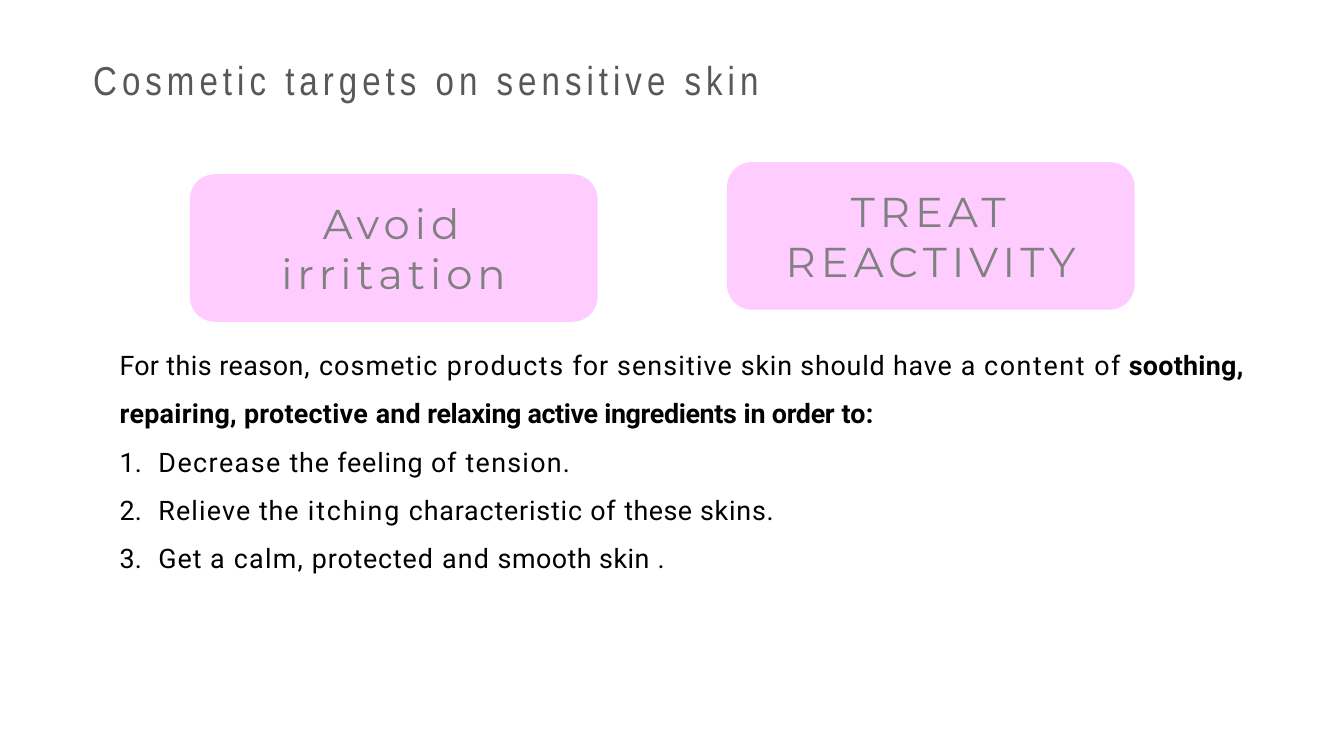
from pptx import Presentation
from pptx.dml.color import RGBColor
from pptx.enum.shapes import MSO_SHAPE
from pptx.enum.text import MSO_ANCHOR, MSO_AUTO_SIZE, PP_ALIGN
from pptx.util import Inches, Pt
from lxml import etree

ROUNDED = MSO_SHAPE.ROUNDED_RECTANGLE
MIDDLE, TOP = MSO_ANCHOR.MIDDLE, MSO_ANCHOR.TOP
LEFT, CENTER = PP_ALIGN.LEFT, PP_ALIGN.CENTER
NO_FIT = MSO_AUTO_SIZE.NONE
DRAWING = "{http://schemas.openxmlformats.org/drawingml/2006/main}"

TITLE = "Cosmetic targets on sensitive skin"
CARDS = [
    ("Avoid irritation", 1.57, 1.44),
    ("TREAT REACTIVITY", 6.01, 1.34),
]
# Each span is its text and its letter spacing in points.
REASON = [
    ("For", 0.1), (" this reason", 0.3), (",", 1), (" cosmetic", 0.7),
    (" products", 0.9), (" for", 0.6), (" sensitive", 0.7),
    (" skin should have", 0.5), (" a ", 0.6), ("content", 1), (" of", 0.8),
]
INGREDIENTS = [
    (" soothing, repairing, protective", 0.2), (" and", 0.1),
    (" relaxing active ingredients ", -0.2), ("in", 0), (" order", -0.2),
    (" to", 0.1), (":", 0.6),
]
GOALS = [
    [("Decrease", 0.9), (" the feeling of", 0.5), (" tension.", 0.8)],
    [("Relieve", 0.7), (" the", 0.5), (" itching", 1.1),
     (" characteristic of", 0.5), (" these ", 0.3), ("skins.", 0.5)],
    [("Get a", 0.6), (" calm,", 0.8), (" protected", 0.5), (" and", 0.8),
     (" smooth skin ", 0.3), (".", 0.5)],
]


def color(value):
    return RGBColor.from_string(value)


class SlideBuilder:
    title_style = ("Arial Narrow", 24, "585858")
    card_style = ("Montserrat", 24.8, "808080")
    body_style = ("Roboto", 16, "000000")
    card_fill = "FFCCFF"

    def __init__(self, page):
        self.page = page

    def frame(self, box, anchor, side=0):
        """Prepare the text frame of a box with equal side margins."""
        frame = box.text_frame
        frame.word_wrap = True
        frame.auto_size = NO_FIT
        frame.vertical_anchor = anchor
        frame.margin_left = frame.margin_right = Inches(side)
        frame.margin_top = frame.margin_bottom = 0
        return frame

    def spans(self, para, spans, style, bold=False):
        name, size, ink = style
        for text, spacing in spans:
            span = para.add_run()
            span.text = text
            font = span.font
            font.name, font.size, font.bold = name, Pt(size), bold
            font.color.rgb = color(ink)
            span._r.get_or_add_rPr().set("spc", str(round(spacing * 100)))

    def title(self, text, left, top, width, height):
        box = self.page.shapes.title
        box.left, box.top = Inches(left), Inches(top)
        box.width, box.height = Inches(width), Inches(height)
        para = self.frame(box, MIDDLE).paragraphs[0]
        para.alignment = LEFT
        para.line_spacing = 0.9
        self.spans(para, [(text, 3)], self.title_style)

    def card(self, text, left, top, width=3.37, height=1.22):
        box = self.page.shapes.add_shape(
            ROUNDED, Inches(left), Inches(top), Inches(width), Inches(height))
        box.adjustments[0] = 0.17
        box.shadow.inherit = False
        box.fill.solid()
        box.fill.fore_color.rgb = color(self.card_fill)
        box.line.fill.background()
        para = self.frame(box, MIDDLE, side=0.25).paragraphs[0]
        para.alignment = CENTER
        self.spans(para, [(text, 3)], self.card_style)

    def body(self, left, top, width, height):
        box = self.page.shapes.add_textbox(
            Inches(left), Inches(top), Inches(width), Inches(height))
        frame = self.frame(box, TOP)
        para = frame.paragraphs[0]
        para.line_spacing = 1.5
        self.spans(para, REASON, self.body_style)
        self.spans(para, INGREDIENTS, self.body_style, bold=True)
        for goal in GOALS:
            para = frame.add_paragraph()
            self.number(para)
            para.space_before = Pt(9.5)
            self.spans(para, goal, self.body_style)

    def number(self, para, indent=0.32):
        """Give a paragraph an automatic number and a hanging indent."""
        props = para._p.get_or_add_pPr()
        props.set("marL", str(Inches(indent)))
        props.set("indent", str(-Inches(indent)))
        etree.SubElement(props, DRAWING + "buAutoNum", type="arabicPeriod")


def main():
    deck = Presentation()
    deck.slide_width, deck.slide_height = Inches(11.11), Inches(6.25)
    builder = SlideBuilder(deck.slides.add_slide(deck.slide_layouts[5]))
    builder.title(TITLE, 0.77, 0.5, 6.2, 0.36)
    for text, left, top in CARDS:
        builder.card(text, left, top)
    builder.body(0.99, 2.75, 9.34, 1.97)
    deck.save("out.pptx")


if __name__ == "__main__":
    main()
